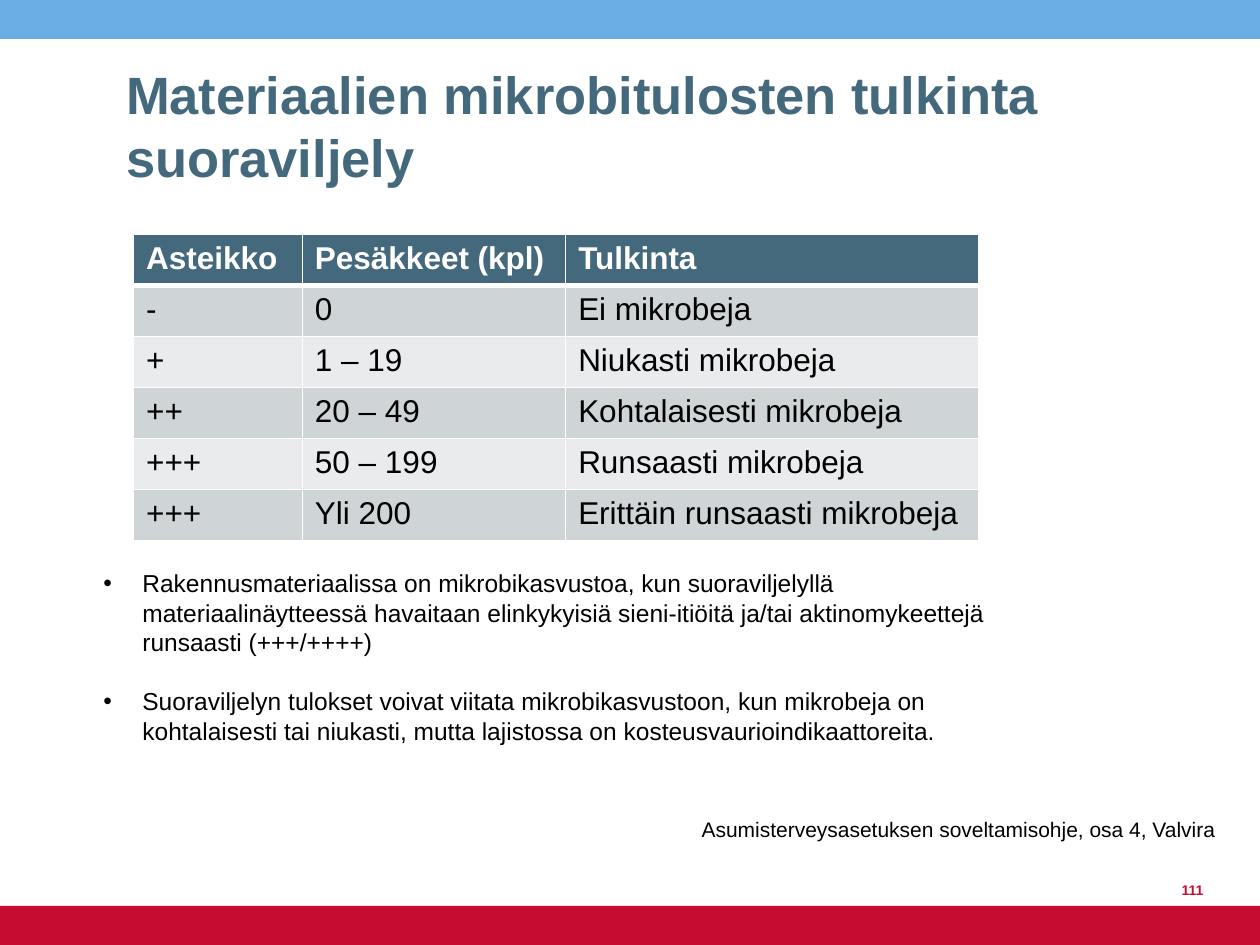
from lxml import etree
from pptx import Presentation
from pptx.dml.color import RGBColor
from pptx.enum.shapes import MSO_SHAPE
from pptx.enum.text import MSO_ANCHOR, MSO_AUTO_SIZE, PP_ALIGN
from pptx.oxml.ns import qn
from pptx.util import Inches, Pt

RECTANGLE = MSO_SHAPE.RECTANGLE
LEFT, RIGHT = PP_ALIGN.LEFT, PP_ALIGN.RIGHT
TOP, BOTTOM = MSO_ANCHOR.TOP, MSO_ANCHOR.BOTTOM
NO_FIT = MSO_AUTO_SIZE.NONE

# Content
TITLE = "Materiaalien mikrobitulosten tulkinta\vsuoraviljely"
ROWS = [
    ("Asteikko", "Pesäkkeet (kpl)", "Tulkinta"),
    ("-", "0", "Ei mikrobeja"),
    ("+", "1 – 19", "Niukasti mikrobeja"),
    ("++", "20 – 49", "Kohtalaisesti mikrobeja"),
    ("+++", "50 – 199", "Runsaasti mikrobeja"),
    ("+++", "Yli 200", "Erittäin runsaasti mikrobeja"),
]
BULLETS = [
    "Rakennusmateriaalissa on mikrobikasvustoa, kun suoraviljelyllä "
    "materiaalinäytteessä havaitaan elinkykyisiä sieni-itiöitä ja/tai "
    "aktinomykeettejä runsaasti (+++/++++)",
    "Suoraviljelyn tulokset voivat viitata mikrobikasvustoon, kun mikrobeja on "
    "kohtalaisesti tai niukasti, mutta lajistossa on kosteusvaurioindikaattoreita.",
]
SOURCE = "Asumisterveysasetuksen soveltamisohje, osa 4, Valvira"
PAGE_NUMBER = "111"

COLORS = {
    "sky": "6AADE4", "red": "C60C30", "slate": "44697D", "white": "FFFFFF",
    "black": "000000", "dark_band": "CFD4D7", "light_band": "E9EBEC",
}
FONT = "Arial"
WIDTH, HEIGHT, STRIP = 10, 7.5, 0.31
COLUMN_WIDTHS = [1.34, 2.09, 3.28]
ROW_HEIGHT = 2.43 / len(ROWS)


def color(name):
    return RGBColor.from_string(COLORS[name])


def format_text(para, size, color_name, bold=False):
    for span in para.runs:
        span.font.name = FONT
        span.font.size = Pt(size)
        span.font.bold = bold
        span.font.color.rgb = color(color_name)


def place(shape, left, top, width, height):
    shape.left, shape.top = Inches(left), Inches(top)
    shape.width, shape.height = Inches(width), Inches(height)


def add_text(page, text, area, size, color_name, bold=False, align=LEFT,
             anchor=TOP, wrap=True):
    frame = page.shapes.add_textbox(*map(Inches, area)).text_frame
    frame.text = text
    frame.word_wrap = wrap
    frame.vertical_anchor = anchor
    frame.paragraphs[0].alignment = align
    format_text(frame.paragraphs[0], size, color_name, bold)


def set_borders(cell, widths):
    properties = cell._tc.get_or_add_tcPr()
    for index, (side, width) in enumerate(widths.items()):
        line = etree.Element(qn(f"a:ln{side}"), w=str(Pt(width)))
        fill = etree.SubElement(line, qn("a:solidFill"))
        etree.SubElement(fill, qn("a:srgbClr"), val=COLORS["white"])
        properties.insert(index, line)


def add_bullet(para):
    properties = para._p.get_or_add_pPr()
    properties.set("marL", str(Inches(0.31)))
    properties.set("indent", str(Inches(-0.31)))
    etree.SubElement(properties, qn("a:buFont"), typeface=FONT)
    etree.SubElement(properties, qn("a:buChar"), char="•")


deck = Presentation()
deck.slide_width, deck.slide_height = Inches(WIDTH), Inches(HEIGHT)
page = deck.slides.add_slide(deck.slide_layouts[1])
title, body = page.placeholders

# Top and bottom strips
for top, fill in ((0, "sky"), (HEIGHT - STRIP, "red")):
    strip = page.shapes.add_shape(
        RECTANGLE, 0, Inches(top), Inches(WIDTH), Inches(STRIP))
    strip.shadow.inherit = False
    strip.fill.solid()
    strip.fill.fore_color.rgb = color(fill)
    strip.line.fill.background()

# Title
place(title, 0.9, 0.36, 8.19, 1.18)
title.text_frame.text = TITLE
title.text_frame.auto_size = NO_FIT
title.text_frame.vertical_anchor = BOTTOM
title.text_frame.paragraphs[0].alignment = LEFT
format_text(title.text_frame.paragraphs[0], 30, "slate", bold=True)

# Scale table
table = page.shapes.add_table(
    len(ROWS), len(COLUMN_WIDTHS), Inches(1.06), Inches(1.86),
    Inches(sum(COLUMN_WIDTHS)), Inches(ROW_HEIGHT * len(ROWS))).table
for column, width in zip(table.columns, COLUMN_WIDTHS):
    column.width = Inches(width)
for r, texts in enumerate(ROWS):
    table.rows[r].height = Inches(ROW_HEIGHT)
    header = r == 0
    band = "slate" if header else ("light_band", "dark_band")[r % 2]
    for c, text in enumerate(texts):
        cell = table.cell(r, c)
        cell.text = text
        cell.fill.solid()
        cell.fill.fore_color.rgb = color(band)
        format_text(cell.text_frame.paragraphs[0], 18,
                    "white" if header else "black", bold=header)
        set_borders(cell, {"L": 1, "R": 1, "T": 3 if r == 1 else 1,
                           "B": 3 if header else 1})

# Interpretation bullets
place(body, 0.72, 4.46, 7.4, 1.51)
frame = body.text_frame
frame.text = "\n".join(BULLETS)
frame.auto_size = NO_FIT
for index, para in enumerate(frame.paragraphs):
    para.space_before = Pt(17 if index else 0)
    add_bullet(para)
    format_text(para, 14, "black")

# Source line and page number
add_text(page, SOURCE, (5.47, 6.43, 4.31, 0.3), 12, "black", wrap=False)
add_text(page, PAGE_NUMBER, (9.1, 6.78, 0.55, 0.4), 8, "red", bold=True,
         align=RIGHT, anchor=BOTTOM)

deck.save("out.pptx")
